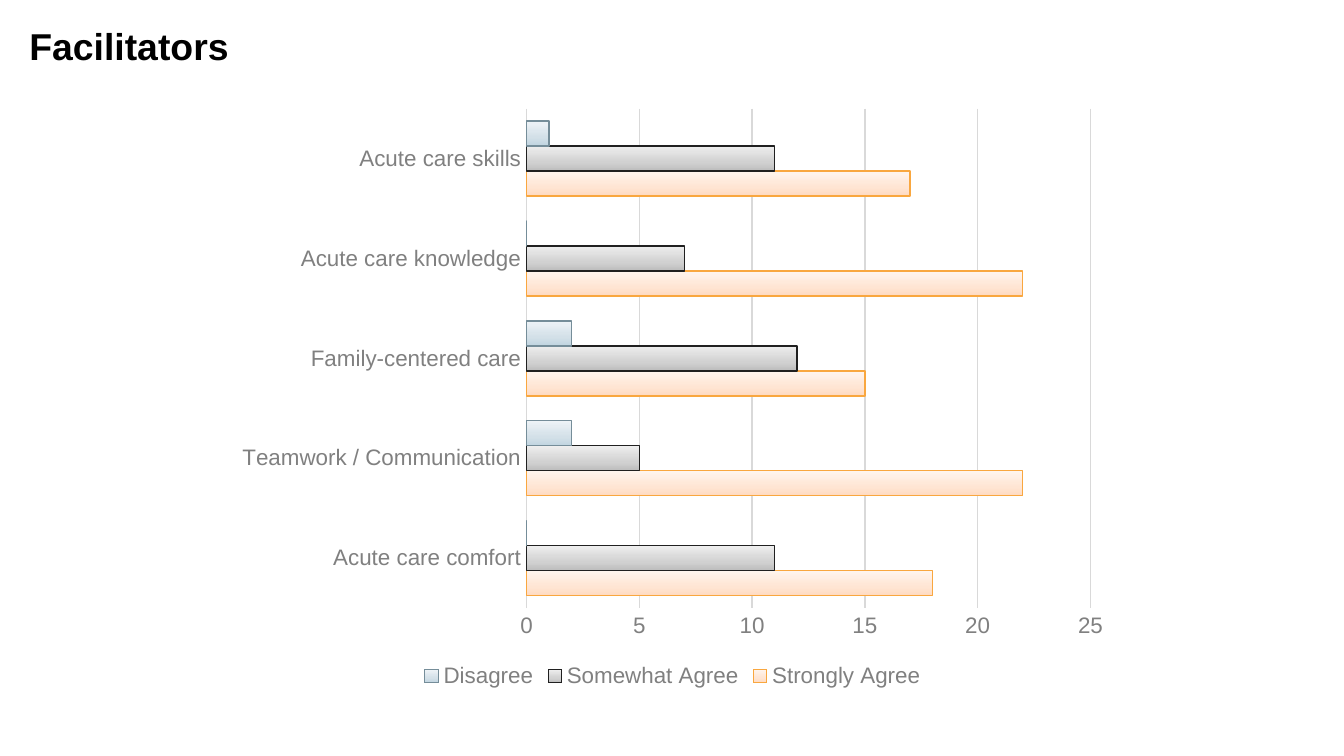
import pptx
import pptx.chart.data
import pptx.dml.color
import pptx.enum.chart
import pptx.enum.text
import pptx.oxml
import pptx.oxml.ns
import pptx.util
from pptx.util import Inches, Pt

FONT = "Arial"
GREY = "808080"
RULE = "D9D9D9"
TOPICS = ["Acute care comfort", "Teamwork / Communication", "Family-centered care",
          "Acute care knowledge", "Acute care skills"]
# answer, counts per topic, gradient from bottom to top, outline
ANSWERS = [
    ("Strongly Agree", (18, 22, 15, 22, 17), ("FFDAC0", "FFE5D3", "FFF5EE"), "F9A73F"),
    ("Somewhat Agree", (11, 5, 12, 7, 11), ("BDBDBD", "D1D1D1", "EEEEEE"), "202020"),
    ("Disagree", (0, 2, 2, 0, 1), ("C0D4E0", "D3E0E8", "EEF3F7"), "758D99"),
]
STOPS = (0, 35, 100)


def rgb(color):
    return pptx.dml.color.RGBColor.from_string(color)


def style_font(font, size, color, bold=False):
    font.name = FONT
    font.size = Pt(size)
    font.bold = bold
    font.color.rgb = rgb(color)


def style_line(line, color):
    line.color.rgb = rgb(color)
    line.width = Pt(0.75)


def fill_upward(series, colors):
    """Fill the bars with a gradient that runs from bottom to top."""
    stops = "".join(
        f'<a:gs pos="{position * 1000}"><a:srgbClr val="{color}"/></a:gs>'
        for position, color in zip(STOPS, colors))
    gradient = pptx.oxml.parse_xml(
        f'<a:gradFill {pptx.oxml.ns.nsdecls("a")}><a:gsLst>{stops}</a:gsLst>'
        '<a:lin ang="16200000" scaled="0"/></a:gradFill>')
    series._element.get_or_add_spPr().insert(0, gradient)


def add_title(slide, left, top, width, height):
    box = slide.shapes.add_textbox(left, top, width, height)
    frame = box.text_frame
    frame.word_wrap = True
    frame.vertical_anchor = pptx.enum.text.MSO_ANCHOR.TOP
    frame.margin_left = frame.margin_right = Inches(0.1)
    frame.margin_top = frame.margin_bottom = Inches(0.1)
    heading = frame.paragraphs[0]
    heading.text = "Facilitators"
    style_font(heading.font, 20, "000000", bold=True)


def style_axes(chart):
    for axis in (chart.category_axis, chart.value_axis):
        axis.major_tick_mark = pptx.enum.chart.XL_TICK_MARK.NONE
        axis.minor_tick_mark = pptx.enum.chart.XL_TICK_MARK.NONE
        style_font(axis.tick_labels.font, 12, GREY)
    chart.category_axis.has_major_gridlines = False
    style_line(chart.category_axis.format.line, RULE)
    chart.value_axis.format.line.fill.background()
    chart.value_axis.has_major_gridlines = True
    style_line(chart.value_axis.major_gridlines.format.line, RULE)


def add_answer_chart(slide, left, top, width, height):
    survey = pptx.chart.data.CategoryChartData(number_format="General")
    survey.categories = TOPICS
    for answer, counts, _, _ in ANSWERS:
        survey.add_series(answer, counts)
    chart = slide.shapes.add_chart(
        pptx.enum.chart.XL_CHART_TYPE.BAR_CLUSTERED,
        left, top, width, height, survey).chart
    chart.has_title = False
    style_font(chart.font, 10, "000000")
    style_axes(chart)

    bars = chart.plots[0]
    bars.gap_width = 100
    bars.vary_by_categories = False
    for series, (_, _, colors, outline) in zip(bars.series, ANSWERS):
        fill_upward(series, colors)
        style_line(series.format.line, outline)

    chart.has_legend = True
    chart.legend.position = pptx.enum.chart.XL_LEGEND_POSITION.BOTTOM
    chart.legend.include_in_layout = False
    style_font(chart.legend.font, 12, GREY)


def main():
    deck = pptx.Presentation()
    deck.slide_width = Inches(10)
    deck.slide_height = deck.slide_width * 9 // 16
    slide = deck.slides.add_slide(deck.slide_layouts[6])
    add_title(slide, Inches(0.12), Inches(0.07), Inches(1.84), Inches(0.6))
    add_answer_chart(slide, Inches(1.67), Inches(0.72), Inches(6.67), Inches(4.44))
    deck.save("out.pptx")


if __name__ == "__main__":
    main()
